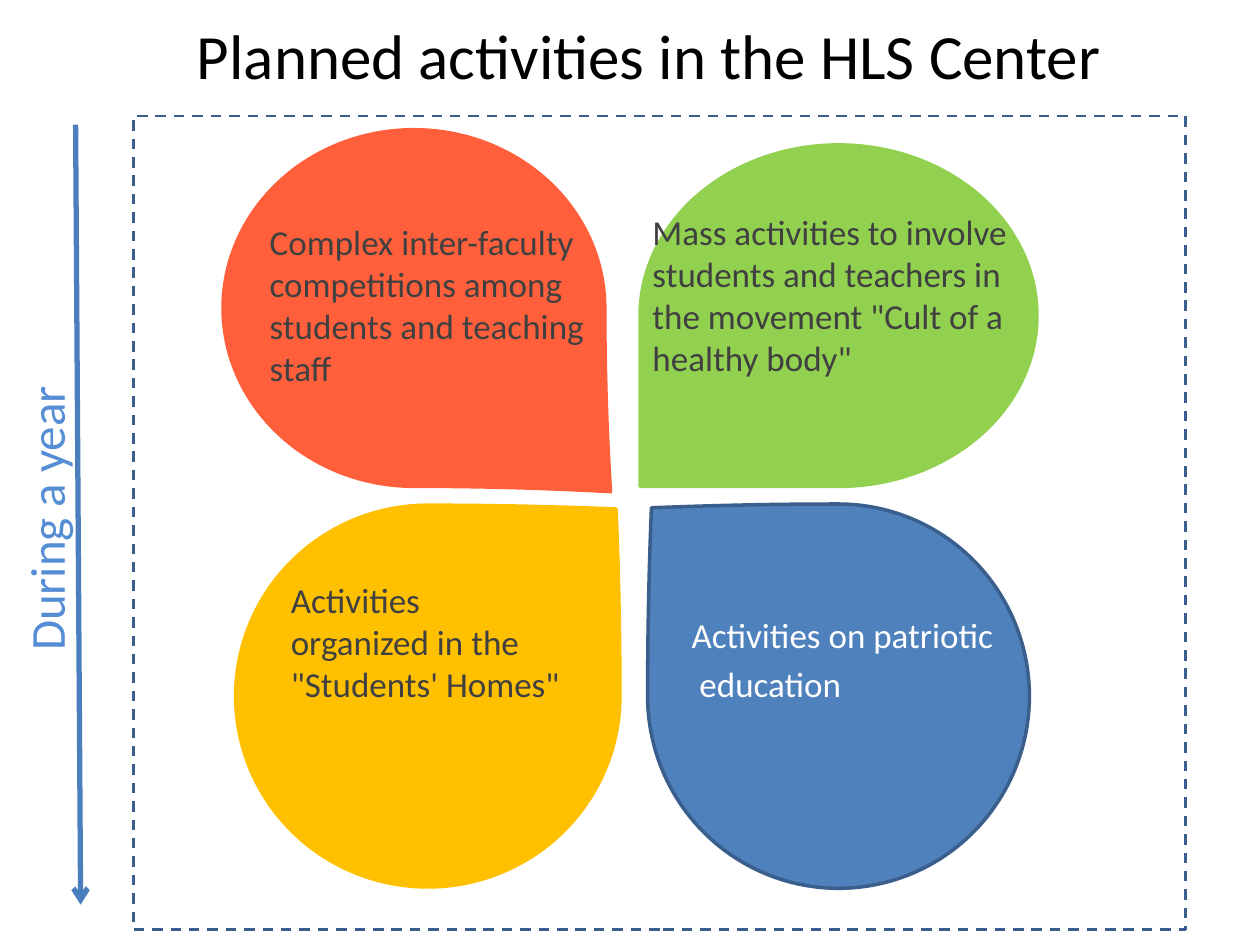
from lxml import etree
from pptx import Presentation
from pptx import util as u
from pptx.dml.color import RGBColor
from pptx.enum import dml, shapes, text
from pptx.oxml.ns import qn

FONT = "Calibri"
DARK, WHITE, BLUE, OUTLINE = "404040", "FFFFFF", "4F81BD", "3A5F8C"

# petal box, rotation, point, fill, line, text box, text colour, lines
PETALS = [
    ((1.87, 0.93, 2.83, 3.03), 90, 1.03, "FF603B", "FF603B", (2.04, 1.7, 2.88, 2.08), DARK,
     ["Complex inter-faculty competitions among students and teaching staff"]),
    ((1.87, 4.01, 3.05, 3.03), 0, 0.98, "FFC000", "FFC000", (2.21, 4.54, 2.36, 2.28), DARK,
     ["Activities organized in the \"Students' Homes\""]),
    ((5.13, 4.01, 3.05, 3.03), 270, 0.98, BLUE, OUTLINE, (5.39, 4.82, 3.94, 2.28), WHITE,
     ["Activities on patriotic", " education"]),
    ((5.08, 1.15, 3.15, 2.71), 180, 1, "92D050", "92D050", (5.08, 1.62, 3.09, 2.08), DARK,
     ["Mass activities to involve students and teachers in the movement "
      "\"Cult of a healthy body\""]),
]


def color(value):
    """Turn a hex string into a colour."""
    return RGBColor.from_string(value)


def assign(target, values):
    """Set every attribute named in a dict of format values."""
    for name, value in values.items():
        setattr(target, name, value)


def place(shape, box):
    """Move a shape to a box given in inches."""
    names = ("left", "top", "width", "height")
    assign(shape, dict(zip(names, map(u.Inches, box))))


def write(shape, lines, size, ink, align, anchor, before=0):
    """Fill a shape with formatted paragraphs without bullets."""
    frame = shape.text_frame
    assign(frame, {"word_wrap": True, "vertical_anchor": anchor,
                   "auto_size": text.MSO_AUTO_SIZE.NONE})
    for index, line in enumerate(lines):
        para = frame.paragraphs[0] if index == 0 else frame.add_paragraph()
        assign(para, {"alignment": align, "space_before": u.Pt(before)})
        properties = para._p.get_or_add_pPr()
        properties.set("marL", "0")
        properties.set("indent", "0")
        etree.SubElement(properties, qn("a:buNone"))
        span = para.add_run()
        span.text = line
        assign(span.font, {"name": FONT, "size": u.Pt(size)})
        span.font.color.rgb = color(ink)


def outline(shape, ink, width):
    """Give a shape or connector a line."""
    shape.line.color.rgb = color(ink)
    shape.line.width = u.Pt(width)


def add_title(page, box):
    """Place the slide heading."""
    title = page.shapes.title
    place(title, box)
    write(title, ["Planned activities in the HLS Center"], 36, "000000",
          text.PP_ALIGN.CENTER, text.MSO_ANCHOR.MIDDLE)


def add_petal(page, box, rotation, point, fill, edge):
    """Draw one teardrop petal."""
    petal = page.shapes.add_shape(shapes.MSO_SHAPE.TEAR, *map(u.Inches, box))
    petal.rotation = rotation
    petal.adjustments[0] = point
    petal.shadow.inherit = False
    petal.fill.solid()
    petal.fill.fore_color.rgb = color(fill)
    outline(petal, edge, 2)


def add_flower(page, box):
    """Draw the dashed frame with its four labelled petals."""
    for petal in PETALS:
        add_petal(page, *petal[:5])
    body = page.placeholders[1]
    body.element.getparent().append(body.element)
    for index, (*_, label_box, ink, lines) in enumerate(PETALS):
        label = body if index == 0 else page.shapes.add_textbox(0, 0, 0, 0)
        place(label, label_box)
        write(label, lines, 20, ink, text.PP_ALIGN.LEFT, text.MSO_ANCHOR.TOP, before=4)
    frame = page.shapes.add_shape(shapes.MSO_SHAPE.RECTANGLE, *map(u.Inches, box))
    frame.shadow.inherit = False
    frame.fill.background()
    outline(frame, OUTLINE, 1.5)
    frame.line.dash_style = dml.MSO_LINE.DASH


def add_timeline(page, box):
    """Draw the downward arrow and its upright caption."""
    left, top, width, height = box
    arrow = page.shapes.add_connector(
        shapes.MSO_CONNECTOR.STRAIGHT,
        *map(u.Inches, (left, top, left + width, top + height)))
    outline(arrow, "4B7EBC", 3)
    etree.SubElement(arrow.line._get_or_add_ln(), qn("a:tailEnd"), type="arrow")
    etree.SubElement(arrow.element.spPr, qn("a:effectLst"))
    caption = page.shapes.add_textbox(0, 0, 0, 0)
    place(caption, (left - 3.51, top + 2.89, 6.54, 0.47))
    caption.rotation = 270
    write(caption, ["During a year"], 28, "558ED5",
          text.PP_ALIGN.CENTER, text.MSO_ANCHOR.MIDDLE)


def main():
    """Build and save the slide."""
    deck = Presentation()
    assign(deck, {"slide_width": u.Inches(10), "slide_height": u.Inches(7.5)})
    page = deck.slides.add_slide(deck.slide_layouts[1])
    add_title(page, (0.65, -0.19, 9, 1.25))
    add_flower(page, (1.06, 0.92, 8.35, 6.46))
    add_timeline(page, (0.6, 0.99, 0.04, 6.19))
    deck.save("out.pptx")


if __name__ == "__main__":
    main()
